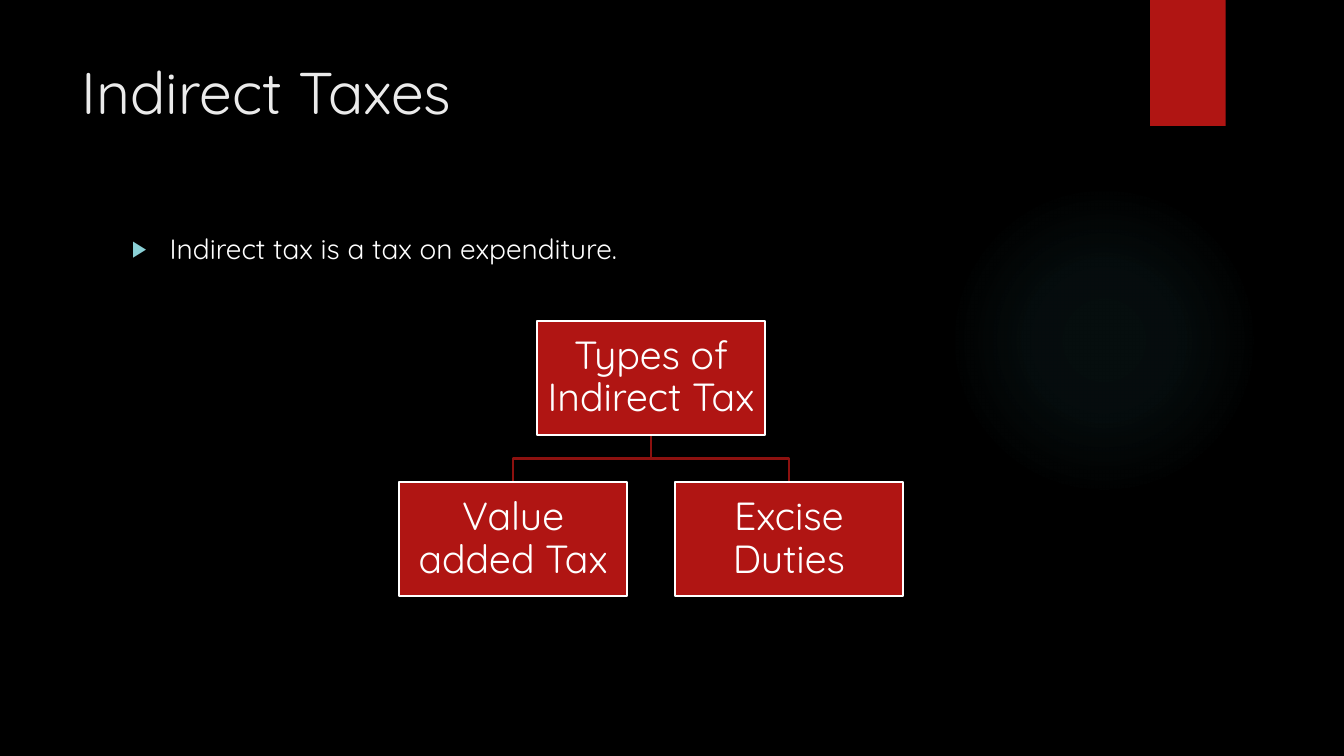
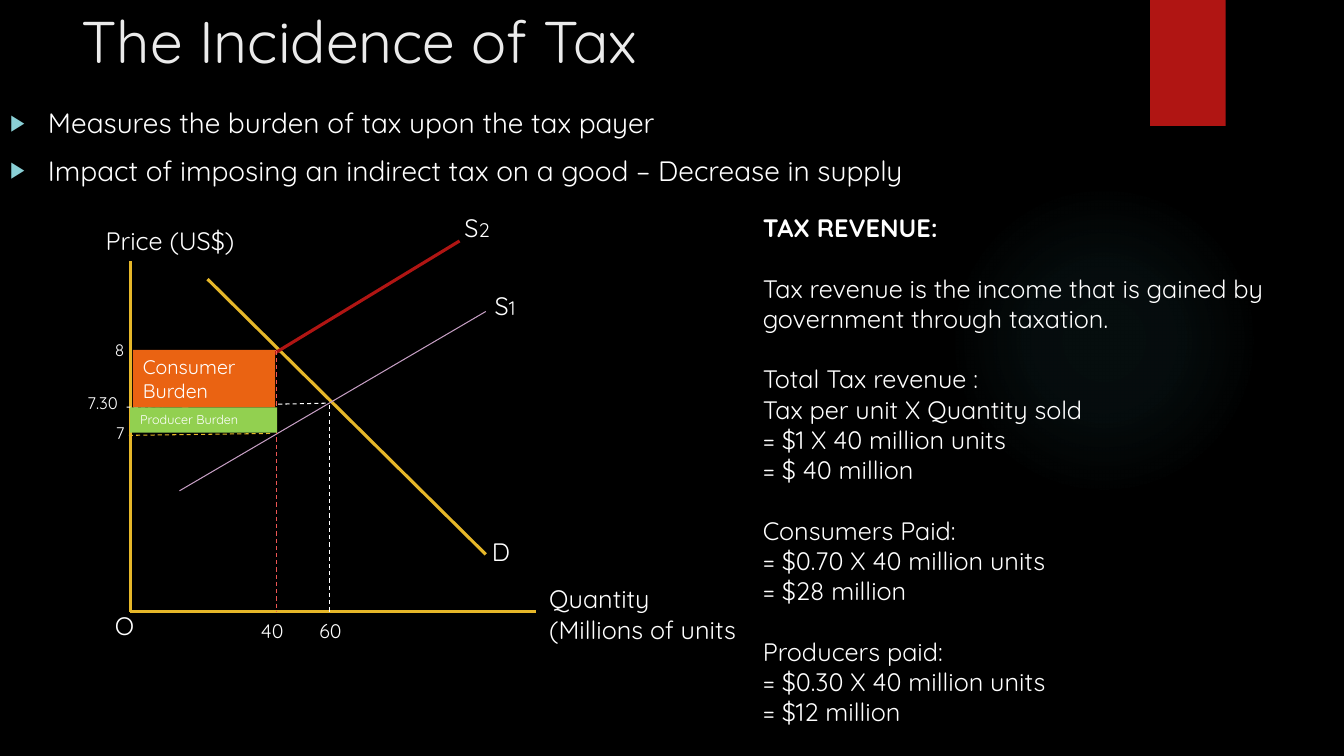
from dataclasses import dataclass

from pptx import Presentation
from pptx.dml.color import RGBColor
from pptx.enum.dml import MSO_LINE
from pptx.enum.shapes import MSO_CONNECTOR, MSO_SHAPE
from pptx.enum.text import MSO_ANCHOR, MSO_AUTO_SIZE, PP_ALIGN
from pptx.oxml import parse_xml
from pptx.oxml.ns import nsdecls
from pptx.shapes.autoshape import Shape
from pptx.slide import Slide, SlideLayout
from pptx.text.text import TextFrame
from pptx.util import Pt

FONT = "Quicksand"
BLACK = RGBColor(0x00, 0x00, 0x00)
WHITE = RGBColor(0xFF, 0xFF, 0xFF)
TITLE_GREY = RGBColor(0xEB, 0xEB, 0xEB)
RED = RGBColor(0xB0, 0x15, 0x13)
DARK_RED = RGBColor(0x8D, 0x11, 0x0F)
CORAL = RGBColor(0xED, 0x56, 0x54)
GOLD = RGBColor(0xE6, 0xB7, 0x29)
LILAC = RGBColor(0xC5, 0x9E, 0xC3)
ORANGE = RGBColor(0xEA, 0x63, 0x12)
GREEN = RGBColor(0x92, 0xD0, 0x50)
BULLET_TEAL = RGBColor(0x8A, 0xD0, 0xD6)
GLOW_TEAL = RGBColor(0x50, 0xB9, 0xC1)
GLOW_STOPS = ((0, 7), (36, 6), (69, 0))  # position and opacity, in percent


@dataclass(frozen=True)
class Box:
    left: float
    top: float
    width: float
    height: float

    def emu(self) -> tuple[int, int, int, int]:
        return Pt(self.left), Pt(self.top), Pt(self.width), Pt(self.height)


@dataclass(frozen=True)
class Line:
    start: tuple[float, float]
    end: tuple[float, float]
    color: RGBColor
    width: float = 2.25
    dashed: bool = False


@dataclass(frozen=True)
class Label:
    text: str
    box: Box
    size: float = 18
    index: str = ""


@dataclass(frozen=True)
class Burden:
    text: str
    box: Box
    color: RGBColor
    size: float


AXIS_X, AXIS_Y = 93, 437
TAXED_QUANTITY, FREE_QUANTITY = 197.3, 235.4
TAXED_PRICE = 250.6

DIAGRAM_LINES = (
    Line((AXIS_X, 186.5), (AXIS_X, AXIS_Y), GOLD),
    Line((AXIS_X, AXIS_Y), (383, AXIS_Y), GOLD),
    Line((148.3, 199.4), (347, 396), GOLD),
    Line((128.2, 350.6), (347, 222.5), LILAC, 0.75),
    Line((106.6, 306.7), (328.3, 172.1), RED),
    Line((232.6, 288), (89.3, 290.9), WHITE, 0.75, True),
    Line((FREE_QUANTITY, 289.4), (FREE_QUANTITY, AXIS_Y), WHITE, 0.75, True),
    Line((TAXED_QUANTITY, TAXED_PRICE), (95, TAXED_PRICE), CORAL, 0.75, True),
    Line((TAXED_QUANTITY, TAXED_PRICE), (TAXED_QUANTITY, AXIS_Y), CORAL, 0.75, True),
    Line((193, 309.6), (90.7, 311), GOLD, 0.75, True),
)
DIAGRAM_LABELS = (
    Label("Quantity\n(Millions of units", Box(385.2, 413.3, 158.4, 51)),
    Label("Price (US$)", Box(68.4, 157.7, 128, 29)),
    Label("D", Box(344.2, 379.4, 49, 29)),
    Label("S", Box(346.3, 203.8, 35.3, 29), index="1"),
    Label("S", Box(324.7, 148.3, 44, 29), index="2"),
    Label("7.30", Box(55.4, 277.2, 52, 21.6), 12),
    Label("7", Box(75.6, 298.1, 29.5, 21.6), 12),
    Label("8", Box(75, 239, 21.6, 21.6), 12),
    Label("60", Box(221, 438.5, 36, 24.5), 14),
    Label("40", Box(179.3, 438.5, 36, 24.5), 14),
    Label("O", Box(75, 432.7, 21, 29.5)),
)
BURDENS = (
    Burden("Consumer Burden", Box(95, 250, 101.5, 41), ORANGE, 14),
    Burden("Producer Burden", Box(AXIS_X, 291, 105, 18), GREEN, 9),
)
REVENUE_GROUPS = (
    ("TAX REVENUE:",),
    ("Tax revenue is the income that is gained by government through taxation.",),
    (
        "Total Tax revenue :",
        "Tax per unit X Quantity sold",
        "= $1 X 40 million units",
        "= $ 40 million",
    ),
    ("Consumers Paid:", "= $0.70 X 40 million units", "= $28 million"),
    ("Producers paid:", "= $0.30 X 40 million units", "= $12 million"),
)


def write(
    frame: TextFrame,
    text: str,
    *,
    size: float,
    color: RGBColor = WHITE,
    bold: bool = False,
    align: PP_ALIGN = PP_ALIGN.LEFT,
    space_before: float = 0,
    line_spacing: float = 1.0,
    bullet: bool = False,
    index: str = "",
) -> None:
    """Add one paragraph, using the frame's first one while it is empty."""
    first = frame.paragraphs[0]
    is_first = not first.runs
    paragraph = first if is_first else frame.add_paragraph()
    if bullet:
        add_bullet(paragraph)
    paragraph.alignment = align
    paragraph.line_spacing = line_spacing
    paragraph.space_before = Pt(0 if is_first else space_before)
    for part, part_size in ((text, size), (index, 14)):
        if part:
            run = paragraph.add_run()
            run.text = part
            run.font.name = FONT
            run.font.size = Pt(part_size)
            run.font.bold = bold
            run.font.color.rgb = color


def add_bullet(paragraph) -> None:
    properties = paragraph._p.get_or_add_pPr()
    properties.set("marL", str(Pt(27)))
    properties.set("indent", str(-Pt(27)))
    for xml in (
        f'<a:buClr {nsdecls("a")}><a:srgbClr val="{BULLET_TEAL}"/></a:buClr>',
        f'<a:buSzPct {nsdecls("a")} val="80000"/>',
        f'<a:buFont {nsdecls("a")} typeface="Arial"/>',
        f'<a:buChar {nsdecls("a")} char="▶"/>',
    ):
        properties.append(parse_xml(xml))


def add_panel(slide: Slide, box: Box, color: RGBColor, outlined: bool = False) -> Shape:
    panel = slide.shapes.add_shape(MSO_SHAPE.RECTANGLE, *box.emu())
    panel.shadow.inherit = False
    panel.fill.solid()
    panel.fill.fore_color.rgb = color
    if outlined:
        panel.line.color.rgb = WHITE
        panel.line.width = Pt(1.5)
    else:
        panel.line.fill.background()
    return panel


def add_glow(slide: Slide) -> Shape:
    glow = slide.shapes.add_shape(MSO_SHAPE.OVAL, *Box(677.5, 131.8, 221.8, 221.8).emu())
    stops = "".join(
        f'<a:gs pos="{position * 1000}"><a:srgbClr val="{GLOW_TEAL}">'
        f'<a:alpha val="{opacity * 1000}"/></a:srgbClr></a:gs>'
        for position, opacity in GLOW_STOPS
    )
    gradient = parse_xml(
        f'<a:gradFill {nsdecls("a")}><a:gsLst>{stops}</a:gsLst><a:path path="circle">'
        '<a:fillToRect l="50000" t="50000" r="50000" b="50000"/></a:path></a:gradFill>'
    )
    glow.element.spPr.insert(2, gradient)
    glow.line.fill.background()
    glow.shadow.inherit = False
    return glow


def decorate_layout(layout: SlideLayout, slide: Slide) -> None:
    """Give the layout its background, glow and ribbon, drawn by way of a slide."""
    layout.background.fill.solid()
    layout.background.fill.fore_color.rgb = BLACK
    ribbon = add_panel(slide, Box(821.5, 0, 54, 90), RED)
    for shape in (ribbon, add_glow(slide)):
        layout.shapes.element.insert(2, shape.element)


def fill_placeholders(
    slide: Slide, title: str, title_box: Box, bullets: tuple[str, ...], body_box: Box
) -> None:
    heading, body = slide.placeholders
    for placeholder, box in ((heading, title_box), (body, body_box)):
        placeholder.left, placeholder.top, placeholder.width, placeholder.height = box.emu()
        placeholder.text_frame.word_wrap = True
        placeholder.text_frame.auto_size = MSO_AUTO_SIZE.NONE
        placeholder.text_frame.vertical_anchor = MSO_ANCHOR.TOP
    write(heading.text_frame, title, size=42, color=TITLE_GREY)
    for bullet in bullets:
        write(body.text_frame, bullet, size=20, space_before=10, bullet=True)


def add_line(slide: Slide, line: Line) -> None:
    ends = (Pt(value) for value in (*line.start, *line.end))
    connector = slide.shapes.add_connector(MSO_CONNECTOR.STRAIGHT, *ends)
    connector.line.color.rgb = line.color
    connector.line.width = Pt(line.width)
    if line.dashed:
        connector.line.dash_style = MSO_LINE.DASH
    connector.element.spPr.append(parse_xml(f'<a:effectLst {nsdecls("a")}/>'))


def add_text_frame(slide: Slide, box: Box) -> TextFrame:
    frame = slide.shapes.add_textbox(*box.emu()).text_frame
    frame.word_wrap = True
    return frame


def add_branch(slide: Slide, start: tuple[float, float], end: tuple[float, float]) -> None:
    middle = (start[1] + end[1]) / 2
    builder = slide.shapes.build_freeform(Pt(start[0]), Pt(start[1]))
    bends = ((start[0], middle), (end[0], middle), end)
    builder.add_line_segments([(Pt(x), Pt(y)) for x, y in bends], close=False)
    branch = builder.convert_to_shape()
    branch.fill.background()
    branch.line.color.rgb = DARK_RED
    branch.line.width = Pt(1.5)
    branch.shadow.inherit = False


def add_tax_type(slide: Slide, text: str, center: float, top: float) -> None:
    box = Box(center - 81.5, top, 163, 81.5)
    frame = add_panel(slide, box, RED, outlined=True).text_frame
    frame.word_wrap = True
    frame.vertical_anchor = MSO_ANCHOR.MIDDLE
    frame.margin_left = frame.margin_right = Pt(1.4)
    frame.margin_top = frame.margin_bottom = Pt(1.4)
    write(frame, text, size=28, align=PP_ALIGN.CENTER, line_spacing=0.9)


def draw_tax_types(slide: Slide) -> None:
    center, top, child_top, spread = 465, 229, 344.5, 98.5
    children = (("Value added Tax", center - spread), ("Excise Duties", center + spread))
    for _, child_center in children:
        add_branch(slide, (center, top + 81.5), (child_center, child_top))
    add_tax_type(slide, "Types of Indirect Tax", center, top)
    for text, child_center in children:
        add_tax_type(slide, text, child_center, child_top)


def draw_incidence(slide: Slide) -> None:
    for line in DIAGRAM_LINES:
        add_line(slide, line)
    for label in DIAGRAM_LABELS:
        frame = add_text_frame(slide, label.box)
        for text in label.text.split("\n"):
            write(frame, text, size=label.size, index=label.index)
    for burden in BURDENS:
        frame = add_panel(slide, burden.box, burden.color).text_frame
        frame.word_wrap = True
        frame.vertical_anchor = MSO_ANCHOR.TOP
        write(frame, burden.text, size=burden.size)


def write_revenue(slide: Slide) -> None:
    frame = add_text_frame(slide, Box(537.8, 148.3, 401, 378))
    for group_number, group in enumerate(REVENUE_GROUPS):
        for row, text in enumerate(group):
            gap = 0 if row else 21.6
            write(frame, text, size=18, bold=group_number == 0, space_before=gap)


def main() -> None:
    deck = Presentation()
    deck.slide_width, deck.slide_height = Pt(960), Pt(540)
    layout = deck.slide_layouts[1]
    types_slide, incidence_slide = (deck.slides.add_slide(layout) for _ in range(2))
    decorate_layout(layout, types_slide)

    fill_placeholders(
        types_slide, "Indirect Taxes", Box(51, 36, 741, 110),
        ("Indirect tax is a tax on expenditure.",), Box(87, 162, 704, 330.5),
    )
    draw_tax_types(types_slide)

    fill_placeholders(
        incidence_slide, "The Incidence of Tax", Box(51, 0, 741, 62),
        (
            "Measures the burden of tax upon the tax payer",
            "Impact of imposing an indirect tax on a good – Decrease in supply",
        ),
        Box(0, 72, 960, 468),
    )
    draw_incidence(incidence_slide)
    write_revenue(incidence_slide)
    deck.save("out.pptx")


if __name__ == "__main__":
    main()
